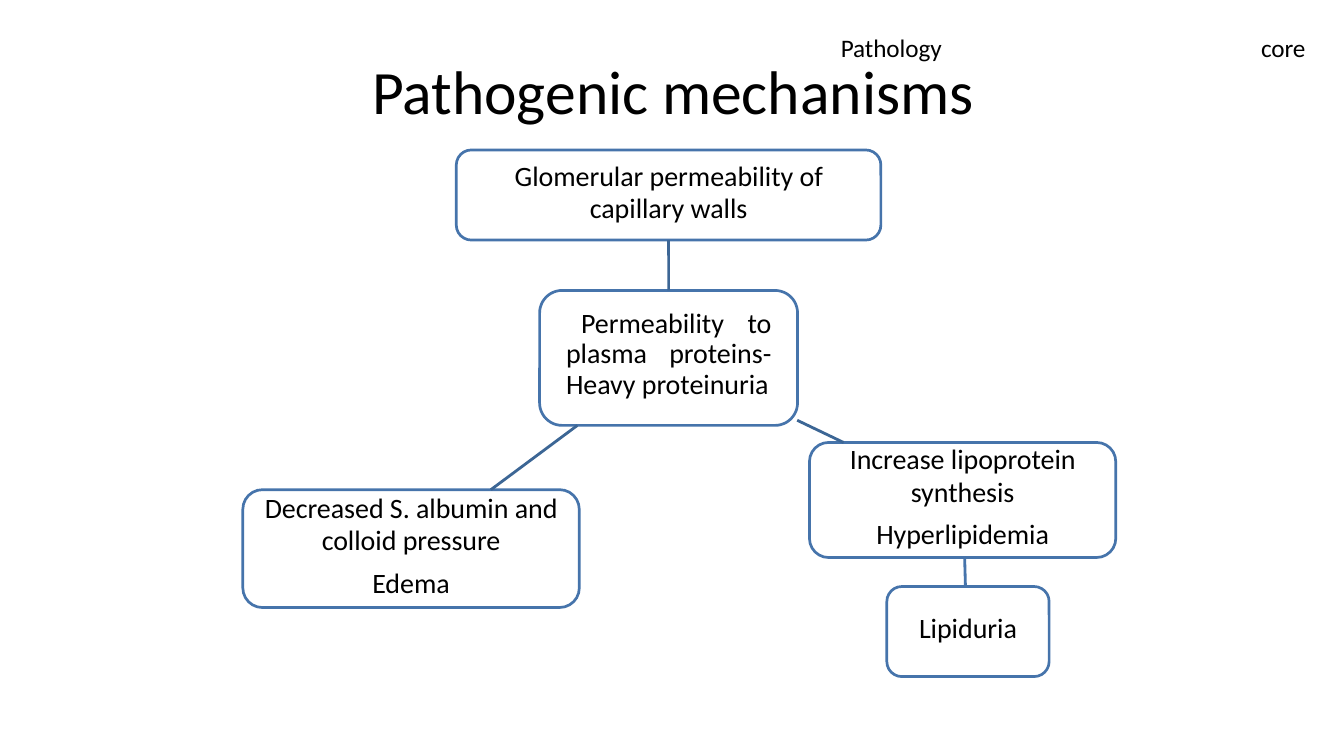
from pptx import Presentation
from pptx.dml.color import RGBColor
from pptx.enum.shapes import MSO_CONNECTOR, MSO_SHAPE
from pptx.enum.text import MSO_ANCHOR, PP_ALIGN
from pptx.oxml.ns import qn
from pptx.util import Cm, Pt
from lxml.etree import SubElement


def paint(format, color):
    format.solid()
    format.fore_color.rgb = RGBColor.from_string(color)


def write(shape, text, size, align, inset=0, bottom=0):
    frame = shape.text_frame
    frame.word_wrap = True
    frame.vertical_anchor = MSO_ANCHOR.MIDDLE
    frame.margin_left = frame.margin_right = Cm(inset)
    frame.margin_top, frame.margin_bottom = 0, Cm(bottom)
    frame.text = text
    for line in frame.paragraphs:
        line.alignment = align
        for run in line.runs:
            run.font.name = "Calibri"
            run.font.size = Pt(size)
            run.font._element.set("spc", "-5")
            paint(run.font.fill, "000000")


deck = Presentation()
deck.slide_width, deck.slide_height = Cm(33.87), Cm(19.05)
slide = deck.slides.add_slide(deck.slide_layouts[6])

labels = [
    ("Pathogenic mechanisms", 9.34, 1.3, 15.24, 1.93, 44, PP_ALIGN.CENTER),
    ("Pathology", 21.19, 0.77, 2.8, 0.85, 18, PP_ALIGN.LEFT),
    ("core", 31.78, 0.77, 1.4, 0.85, 18, PP_ALIGN.LEFT),
]
for text, left, top, width, height, size, align in labels:
    label = slide.shapes.add_textbox(Cm(left), Cm(top), Cm(width), Cm(height))
    write(label, text, size, align)

steps = {
    "walls": ("Glomerular permeability of capillary walls", 11.5, 3.78, 10.7, 2.27, 1),
    "protein": ("Permeability to plasma proteins- Heavy proteinuria", 13.6, 7.32, 6.5, 3.4, 0.5),
    "lipid": ("Increase lipoprotein synthesis\nHyperlipidemia", 20.4, 11.15, 7.72, 2.9, 0.2),
    "urine": ("Lipiduria", 22.35, 14.78, 4.09, 2.27, 0),
    "edema": ("Decreased S. albumin and colloid pressure\nEdema", 6.12, 12.34, 8.48, 2.97, 0.2),
}
boxes = {}
for name, (text, left, top, width, height, inset) in steps.items():
    box = slide.shapes.add_shape(
        MSO_SHAPE.ROUNDED_RECTANGLE, Cm(left), Cm(top), Cm(width), Cm(height))
    box.shadow.inherit = False
    paint(box.fill, "FFFFFF")
    paint(box.line.fill, "4674AB")
    box.line.width = Pt(1.92)
    write(box, text, 20, PP_ALIGN.CENTER, inset, 0.16)
    lines = box.text_frame.paragraphs
    lines[0].line_spacing = Pt(23.1)
    for line in lines[1:]:
        line.space_before = Pt(6.5)
    boxes[name] = box

body = boxes["protein"].text_frame.paragraphs[0]
body.alignment = PP_ALIGN.JUSTIFY
body.line_spacing = 0.92
body._p.get_or_add_pPr().set("indent", str(Cm(0.38)))

links = [
    ("walls", "protein", 16.85, 6.05, 16.85, 7.32, "3C6695", 1.92),
    (None, None, 14.55, 10.72, 12.37, 12.34, "3C6695", 2),
    (None, None, 20.09, 10.59, 21.26, 11.15, "3C6695", 2),
    (None, None, 24.31, 14.05, 24.33, 14.78, "4674AB", 2),
]
for start, end, x1, y1, x2, y2, color, width in links:
    link = slide.shapes.add_connector(
        MSO_CONNECTOR.STRAIGHT, Cm(x1), Cm(y1), Cm(x2), Cm(y2))
    paint(link.line.fill, color)
    link.line.width = Pt(width)
    SubElement(link._element.spPr, qn("a:effectLst"))
    if start:
        link.begin_connect(boxes[start], 2)
        link.end_connect(boxes[end], 0)

deck.save("out.pptx")
